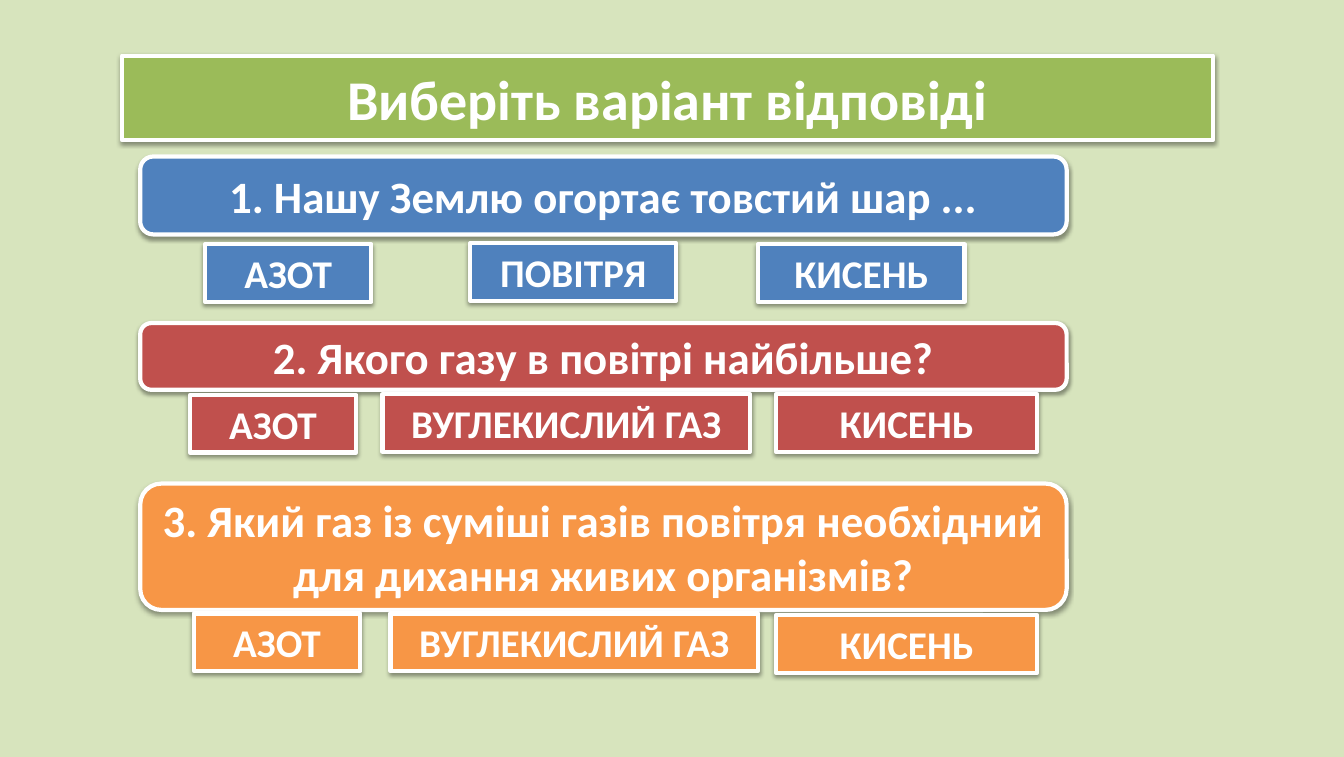
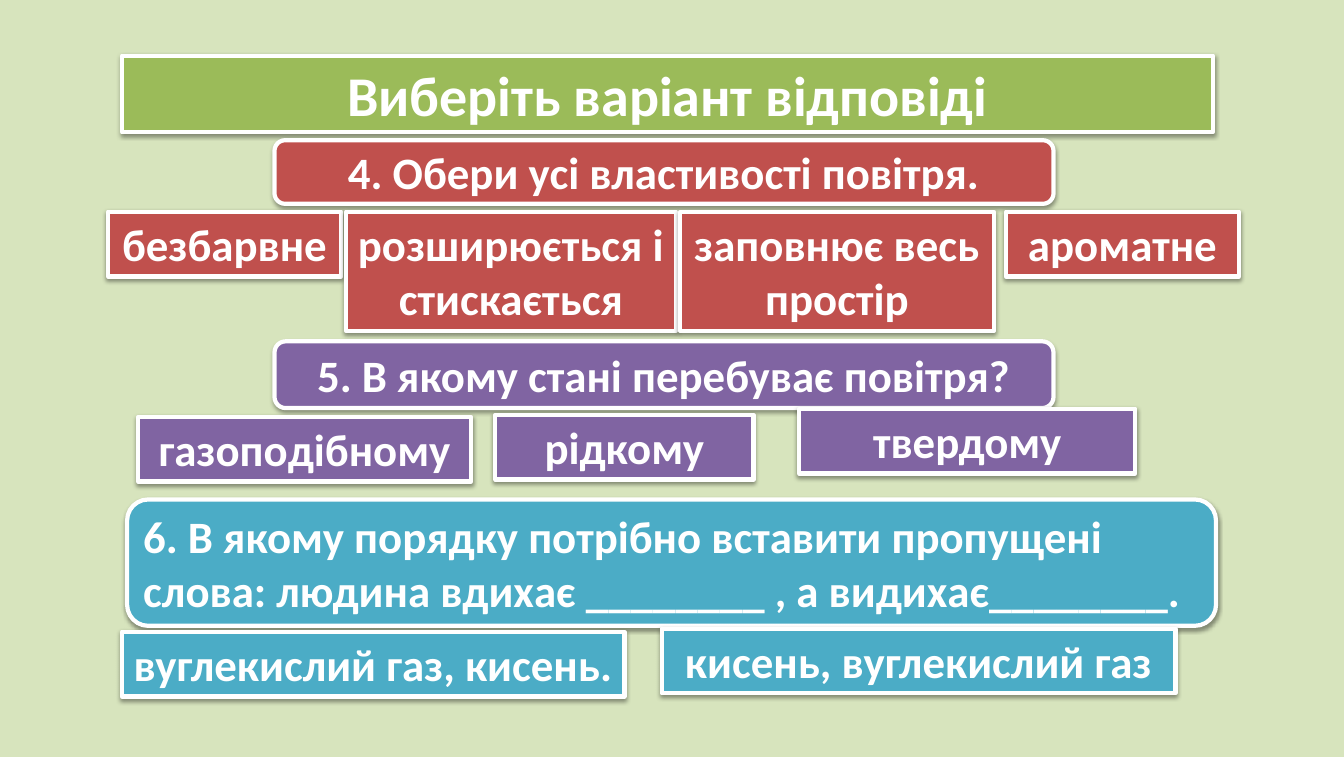
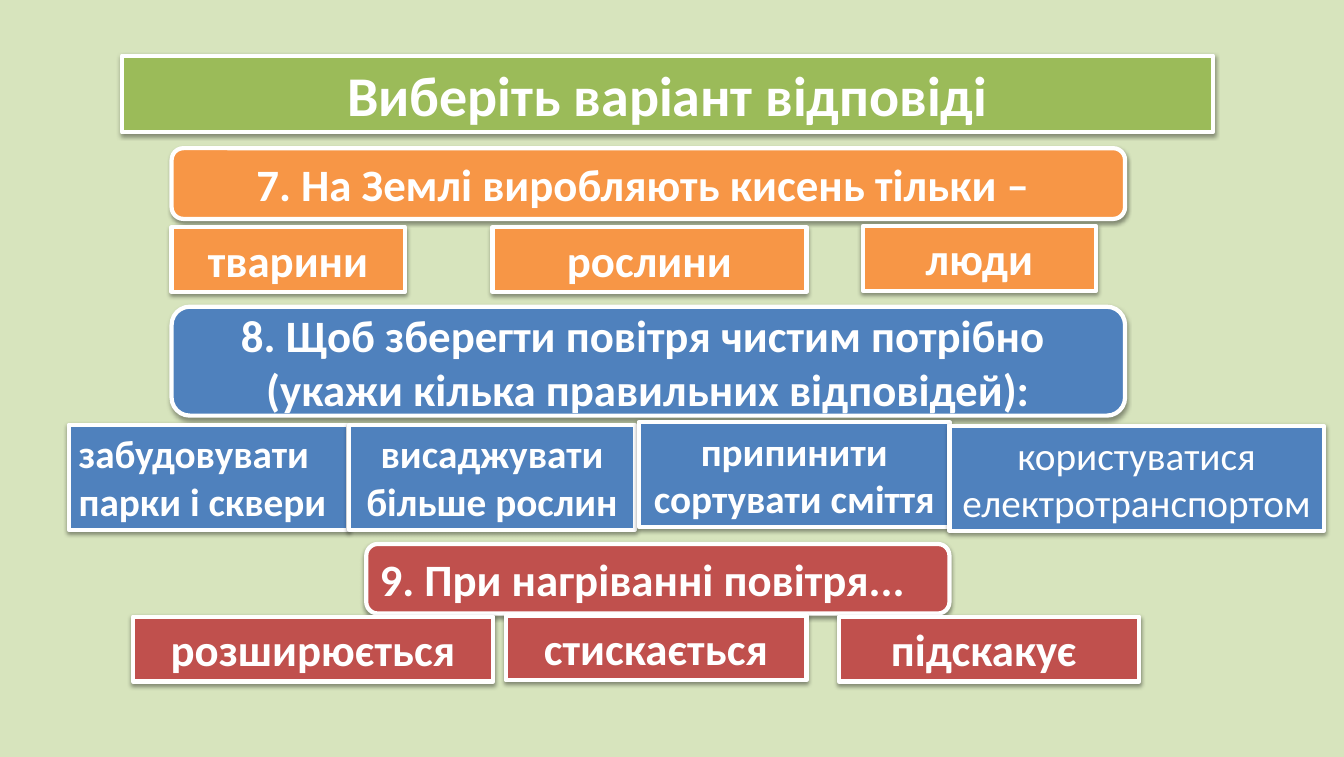
from lxml import etree
from pptx import Presentation
from pptx.dml.color import RGBColor
from pptx.enum.shapes import MSO_SHAPE
from pptx.enum.text import MSO_ANCHOR, MSO_AUTO_SIZE, PP_ALIGN
from pptx.oxml.ns import qn
from pptx.util import Cm, Pt

PALE_GREEN = RGBColor(0xD7, 0xE4, 0xBD)
GREEN = RGBColor(0x9B, 0xBB, 0x59)
BLUE = RGBColor(0x4F, 0x81, 0xBD)
RED = RGBColor(0xC0, 0x50, 0x4D)
ORANGE = RGBColor(0xF7, 0x96, 0x46)
PURPLE = RGBColor(0x80, 0x64, 0xA2)
TEAL = RGBColor(0x4B, 0xAC, 0xC6)
WHITE = RGBColor(0xFF, 0xFF, 0xFF)

RECTANGLE = MSO_SHAPE.RECTANGLE
ROUNDED = MSO_SHAPE.ROUNDED_RECTANGLE
LEFT = PP_ALIGN.LEFT
CENTER = PP_ALIGN.CENTER

TITLE = "Виберіть варіант відповіді"
TITLE_FRAME = {"word_wrap": True, "auto_size": MSO_AUTO_SIZE.NONE, "vertical_anchor": MSO_ANCHOR.MIDDLE}
QUESTION_FRAME = TITLE_FRAME
ANSWER_FRAME = {
    "word_wrap": True,
    "auto_size": MSO_AUTO_SIZE.SHAPE_TO_FIT_TEXT,
    "vertical_anchor": MSO_ANCHOR.TOP,
}
ANSWER_HEIGHTS = {(28, 1): 1.45, (28, 2): 2.64, (32, 1): 1.63, (32, 2): 3.0}
SHADOW = {"blurRad": Pt(3.1), "dist": Pt(1.6), "dir": 90 * 60000, "rotWithShape": 0}


def add_shadow(box):
    box.shadow.inherit = False
    effects = box._element.spPr.find(qn("a:effectLst"))
    shadow = etree.SubElement(effects, qn("a:outerShdw"))
    for name, value in SHADOW.items():
        shadow.set(name, str(int(value)))
    color = etree.SubElement(shadow, qn("a:srgbClr"), val="000000")
    etree.SubElement(color, qn("a:alpha"), val="38000")


def format_box(box, text, color, size, frame_format, align=CENTER, bold=True):
    box.fill.solid()
    box.fill.fore_color.rgb = color
    box.line.color.rgb = WHITE
    box.line.width = Pt(3)
    add_shadow(box)
    frame = box.text_frame
    frame.text = text
    for name, value in frame_format.items():
        setattr(frame, name, value)
    font_format = {"name": "Calibri", "size": Pt(size), "bold": bold}
    for para in frame.paragraphs:
        para.alignment = align
        for span in para.runs:
            for name, value in font_format.items():
                setattr(span.font, name, value)
            span.font.color.rgb = WHITE


# Question: text, colour, (left, top, width, height), alignment, answer size, answers.
# Answer: text, left, top, width, lines, then any special format.
PAGES = [
    (2.13, [
        ("1. Нашу Землю огортає товстий шар ...", BLUE, (3.53, 3.94, 23.32, 1.96), CENTER, 28, [
            ("АЗОТ", 5.16, 6.15, 4.19, 1, {}),
            ("ПОВІТРЯ", 11.84, 6.12, 5.18, 1, {}),
            ("КИСЕНЬ", 19.08, 6.15, 5.2, 1, {}),
        ]),
        ("2. Якого газу в повітрі найбільше?", RED, (3.53, 8.13, 23.32, 1.68), CENTER, 28, [
            ("АЗОТ", 4.78, 9.94, 4.19, 1, {}),
            ("ВУГЛЕКИСЛИЙ ГАЗ", 9.63, 9.92, 9.25, 1, {}),
            ("КИСЕНЬ", 19.53, 9.92, 6.58, 1, {}),
        ]),
        ("3. Який газ із суміші газів повітря необхідний для дихання живих організмів?",
         ORANGE, (3.53, 12.17, 23.32, 3.18), CENTER, 28, [
            ("АЗОТ", 4.88, 15.44, 4.19, 1, {}),
            ("ВУГЛЕКИСЛИЙ ГАЗ", 9.83, 15.44, 9.25, 1, {}),
            ("КИСЕНЬ", 19.53, 15.48, 6.58, 1, {}),
        ]),
    ]),
    (1.93, [
        ("4. Обери усі властивості повітря.", RED, (6.91, 3.53, 19.61, 1.6), CENTER, 32, [
            ("безбарвне", 2.72, 5.33, 5.87, 1, {}),
            ("розширюється і стискається", 8.71, 5.33, 8.31, 2, {}),
            ("заповнює весь простір", 17.12, 5.33, 7.9, 2, {}),
            ("ароматне", 25.32, 5.33, 5.87, 1, {}),
        ]),
        ("5. В якому стані перебуває повітря?", PURPLE, (6.91, 8.59, 19.61, 1.68), CENTER, 32, [
            ("газоподібному", 3.48, 10.49, 8.38, 1, {}),
            ("рідкому", 12.47, 10.44, 6.5, 1, {}),
            ("твердому", 20.12, 10.29, 8.46, 1, {}),
        ]),
        ("6. В якому порядку потрібно вставити пропущені слова: людина вдихає ________ , а видихає________.",
         TEAL, (3.2, 12.57, 27.41, 3.18), LEFT, 32, [
            ("вуглекислий газ, кисень.", 3.07, 15.9, 12.65, 1, {}),
            ("кисень, вуглекислий газ", 16.66, 15.82, 12.93, 1, {}),
        ]),
    ]),
    (1.93, [
        ("7. На Землі виробляють кисень тільки – ", ORANGE, (4.32, 3.73, 24, 1.78), CENTER, 32, [
            ("тварини", 4.32, 5.72, 5.87, 1, {}),
            ("рослини", 12.4, 5.72, 7.9, 1, {}),
            ("люди", 21.72, 5.69, 5.87, 1, {}),
        ]),
        ("8. Щоб зберегти повітря чистим потрібно \n(укажи кілька правильних відповідей):",
         BLUE, (4.32, 7.72, 24, 2.74), CENTER, 28, [
            ("забудовувати парки і сквери", 1.73, 10.69, 7.04, 2, {"align": LEFT}),
            ("висаджувати більше рослин", 8.79, 10.69, 7.19, 2, {}),
            ("припинити сортувати сміття", 16.08, 10.62, 7.82, 2, {}),
            ("користуватися електротранспортом", 23.9, 10.72, 9.42, 2, {"bold": False}),
        ]),
        ("9. При нагріванні повітря...", RED, (9.22, 13.69, 14.68, 1.75), LEFT, 32, [
            ("розширюється", 3.35, 15.52, 9.07, 1, {}),
            ("стискається", 12.73, 15.49, 7.57, 1, {}),
            ("підскакує ", 21.11, 15.52, 7.57, 1, {}),
        ]),
    ]),
]

deck = Presentation()
deck.slide_width = Cm(33.83)
deck.slide_height = Cm(19.05)
background = deck.slide_master.background.fill
background.solid()
background.fore_color.rgb = PALE_GREEN
title_only = deck.slide_layouts[5]

for title_height, questions in PAGES:
    page = deck.slides.add_slide(title_only)
    title = page.shapes.title
    title_place = {"left": 3.07, "top": 1.4, "width": 27.46, "height": title_height}
    for name, value in title_place.items():
        setattr(title, name, Cm(value))
    format_box(title, TITLE, GREEN, 40, TITLE_FRAME)

    for text, color, place, align, answer_size, answers in questions:
        question = page.shapes.add_shape(ROUNDED, *map(Cm, place))
        format_box(question, text, color, 32, QUESTION_FRAME, align)

        for label, left, top, width, lines, special in answers:
            height = ANSWER_HEIGHTS[answer_size, lines]
            answer = page.shapes.add_shape(RECTANGLE, Cm(left), Cm(top), Cm(width), Cm(height))
            format_box(answer, label, color, answer_size, ANSWER_FRAME, **special)

deck.save("out.pptx")
